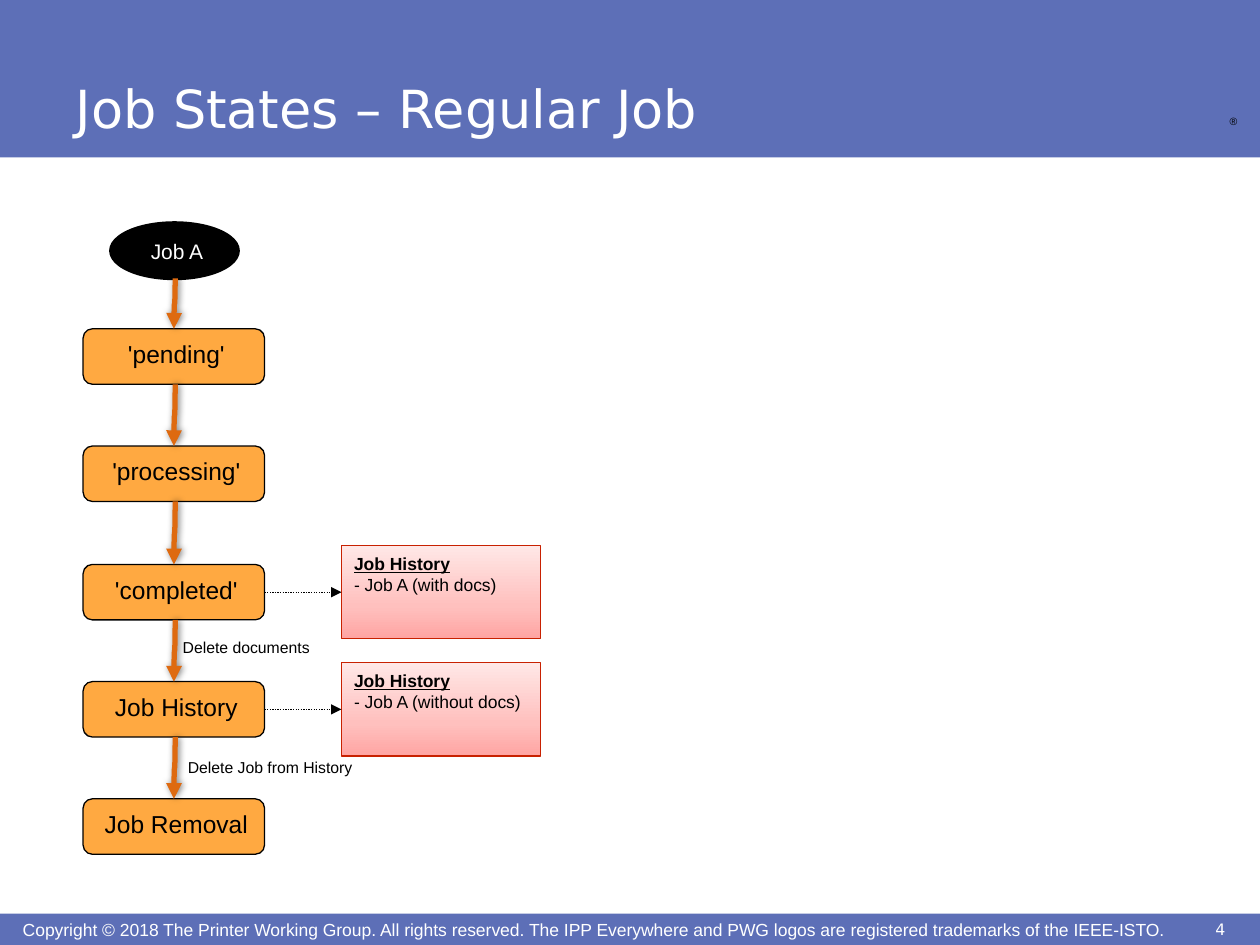
from lxml import etree
from pptx import Presentation
from pptx import util as u
from pptx.dml.color import RGBColor
from pptx.enum import dml, shapes, text
from pptx.oxml.ns import qn

PX = 9144  # EMU in one px, at 100 px to the inch
COLORS = {
    "band": "5D6FB7", "white": "FFFFFF", "black": "000000",
    "state": "FFA941", "arrow": "DE6A10", "note_line": "C82101",
}
NOTE_STOPS = ((0, "FFA5A3"), (35, "FFC0BE"), (100, "FFE7E6"))
FONTS = {
    "title": {"name": "DejaVu Sans", "size": u.Pt(30)},
    "number": {"name": "DejaVu Sans", "size": u.Pt(9)},
    "mark": {"name": "Arial", "size": u.Pt(6)},
    "footer": {"name": "Arial", "size": u.Pt(10)},
    "state": {"name": "Arial", "size": u.Pt(14)},
    "job": {"name": "Arial", "size": u.Pt(12)},
    "label": {"name": "Arial", "size": u.Pt(9)},
    "note": {"name": "Arial", "size": u.Pt(10)},
    "note_head": {"name": "Arial", "size": u.Pt(10), "bold": True, "underline": True},
}
STATES = (
    ("'pending'", 261), ("'processing'", 354), ("'completed'", 448),
    ("Job History", 541), ("Job Removal", 634),
)
STATE_LEFT, STATE_WIDTH, STATE_HEIGHT = 66, 144, 44
NOTE_LEFT = 271
LEFT, CENTER = text.PP_ALIGN.LEFT, text.PP_ALIGN.CENTER
TOP, MIDDLE, BOTTOM = (
    text.MSO_ANCHOR.TOP, text.MSO_ANCHOR.MIDDLE, text.MSO_ANCHOR.BOTTOM)


def rgb(name):
    return RGBColor.from_string(COLORS[name])


def add_child(parent, tag, **attributes):
    child = etree.SubElement(parent, qn(tag))
    for name, value in attributes.items():
        child.set(name, str(value))
    return child


class Page:
    def __init__(self, deck):
        self.shapes = deck.slides.add_slide(deck.slide_layouts[6]).shapes

    def add_lines(self, shape, lines, color="black", align=LEFT, anchor=TOP,
                  inset=(6, 6), indent=4, wrap=True, grow=False):
        """Fill a shape with (wording, font key) lines."""
        frame = shape.text_frame
        across, down = (u.Emu(side * PX) for side in inset)
        fit = text.MSO_AUTO_SIZE
        layout = {
            "margin_left": across, "margin_right": across,
            "margin_top": down, "margin_bottom": down,
            "vertical_anchor": anchor, "word_wrap": wrap,
            "auto_size": fit.SHAPE_TO_FIT_TEXT if grow else fit.NONE,
        }
        for name, value in layout.items():
            setattr(frame, name, value)
        for index, (wording, font) in enumerate(lines):
            para = frame.add_paragraph() if index else frame.paragraphs[0]
            para.alignment = align
            properties = para._p.get_or_add_pPr()
            properties.set("marL", str(indent * PX))
            properties.set("indent", "0")
            span = para.add_run()
            span.text = wording
            for name, value in FONTS[font].items():
                setattr(span.font, name, value)
            span.font.color.rgb = rgb(color)

    def label(self, box, wording, font, **layout):
        shape = self.shapes.add_textbox(*(u.Emu(n * PX) for n in box))
        self.add_lines(shape, [(wording, font)], **layout)

    def shape(self, kind, box, fill=None, line=None, weight=0.75):
        preset = getattr(shapes.MSO_SHAPE, kind)
        shape = self.shapes.add_shape(preset, *(u.Emu(n * PX) for n in box))
        shape.shadow.inherit = False
        if fill:
            shape.fill.solid()
            shape.fill.fore_color.rgb = rgb(fill)
        if line:
            shape.line.color.rgb = rgb(line)
            shape.line.width = u.Pt(weight)
        else:
            shape.line.fill.background()
        return shape

    def note(self, box, detail):
        shape = self.shape("RECTANGLE", box, line="note_line")
        shape.fill.gradient()
        shape.fill.gradient_angle = 90
        stops = shape._element.spPr.find(".//" + qn("a:gsLst"))
        for stop in list(stops):
            stops.remove(stop)
        for percent, color in NOTE_STOPS:
            stop = add_child(stops, "a:gs", pos=percent * 1000)
            add_child(stop, "a:srgbClr", val=color)
        self.add_lines(shape, [("Job History", "note_head"), (detail, "note")])

    def connector(self, kind, ends, color, weight, dash=None):
        """Add an arrow; return it with its empty effect list."""
        line = self.shapes.add_connector(kind, *(u.Emu(int(n * PX)) for n in ends))
        line.line.color.rgb = rgb(color)
        line.line.width = u.Pt(weight)
        if dash:
            line.line.dash_style = dash
        add_child(line.line._get_or_add_ln(), "a:tailEnd", type="triangle")
        return line, add_child(line._element.spPr, "a:effectLst")

    def dotted_arrow(self, x1, x2, y):
        self.connector(shapes.MSO_CONNECTOR.STRAIGHT, (x1, y, x2, y),
                       "black", 0.75, dml.MSO_LINE.ROUND_DOT)

    def flow_arrow(self, x, y1, y2):
        """Draw a slightly curved downward arrow as a quarter-turned connector."""
        middle, half = (y1 + y2) / 2, (y2 - y1) / 2
        ends = (x - half, middle - 0.5, x + half, middle + 0.5)
        line, effects = self.connector(shapes.MSO_CONNECTOR.CURVE, ends, "arrow", 3)
        line.rotation = 90
        line._element.spPr.find(qn("a:xfrm")).set("rot", "5400000")
        shadow = add_child(effects, "a:outerShdw", blurRad=u.Pt(4), dist=u.Pt(1),
                           dir=0, rotWithShape=0)
        tint = add_child(shadow, "a:srgbClr", val=COLORS["black"])
        add_child(tint, "a:alpha", val=50000)


def main():
    deck = Presentation()
    deck.slide_width, deck.slide_height = u.Emu(1000 * PX), u.Emu(750 * PX)
    page = Page(deck)

    page.shape("RECTANGLE", (0, 725, 1000, 25), "band")
    page.shape("RECTANGLE", (0, 0, 1000, 125), "band")
    page.label((964, 86, 27, 19), "®", "mark", indent=6, wrap=False, grow=True)
    page.label((14, 729, 935, 17),
               "Copyright © 2018 The Printer Working Group. All rights reserved. "
               "The IPP Everywhere and PWG logos are registered trademarks "
               "of the IEEE-ISTO.",
               "footer", color="white", anchor=MIDDLE, inset=(0, 0), grow=True)
    page.label((50, 5, 828, 111), "Job States – Regular Job", "title",
               color="white", anchor=BOTTOM)
    page.label((937, 725, 63, 25), "4", "number", color="white",
               align=CENTER, inset=(10, 5), indent=0)

    job = page.shape("OVAL", (88, 177, 101, 44), "black", "black", 2)
    page.add_lines(job, [("Job A", "job")], color="white", align=CENTER,
                   anchor=MIDDLE)

    arrow_start = 221
    for wording, top in STATES:
        box = (STATE_LEFT, top, STATE_WIDTH, STATE_HEIGHT)
        state = page.shape("ROUNDED_RECTANGLE", box, "state", "black")
        page.add_lines(state, [(wording, "state")], align=CENTER)
        page.flow_arrow(138.5, arrow_start, top)
        arrow_start = top + STATE_HEIGHT

    page.label((135, 501, 122, 26), "Delete documents", "label",
               anchor=MIDDLE, wrap=False, grow=True)
    page.label((139, 596, 152, 26), "Delete Job from History", "label",
               anchor=MIDDLE, wrap=False, grow=True)

    for top, detail in ((433, "- Job A (with docs)"), (526, "- Job A (without docs)")):
        page.note((NOTE_LEFT, top, 158, 74), detail)
        page.dotted_arrow(STATE_LEFT + STATE_WIDTH, NOTE_LEFT, top + 37)

    deck.save("out.pptx")


if __name__ == "__main__":
    main()
